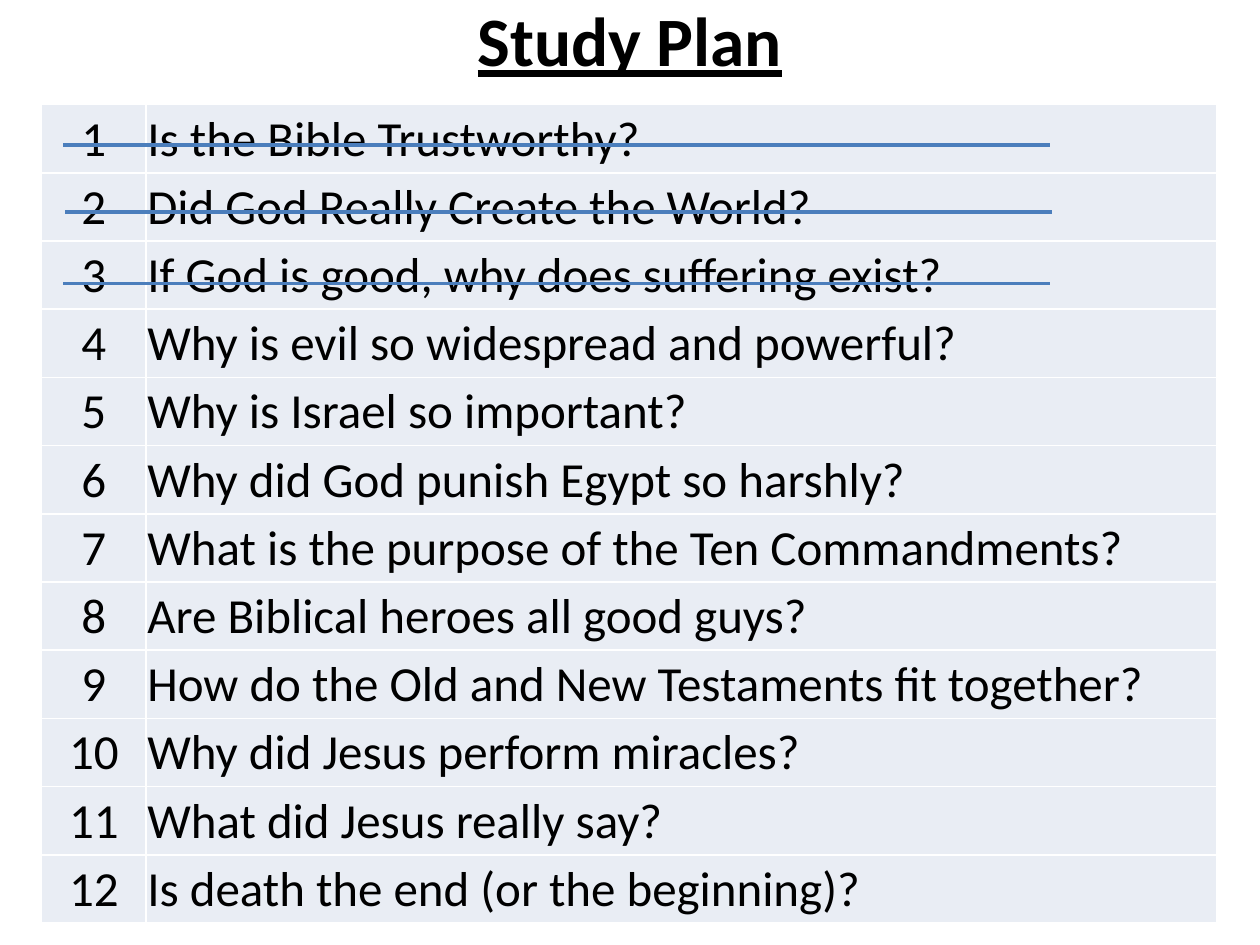
from dataclasses import dataclass

from lxml.etree import SubElement
from pptx import Presentation
from pptx.dml.color import RGBColor
from pptx.enum.shapes import MSO_CONNECTOR
from pptx.enum.text import MSO_ANCHOR, PP_ALIGN
from pptx.oxml.ns import qn
from pptx.util import Inches, Pt


@dataclass(frozen=True)
class Theme:
    font: str = "Calibri"
    text: RGBColor = RGBColor(0x00, 0x00, 0x00)
    cell: RGBColor = RGBColor(0xE9, 0xED, 0xF4)
    strike: RGBColor = RGBColor(0x4B, 0x7E, 0xBC)
    title_size: Pt = Pt(39.6)
    body_size: Pt = Pt(28)
    strike_width: Pt = Pt(2.25)


theme = Theme()

TOPICS = [
    "Is the Bible Trustworthy?",
    "Did God Really Create the World?",
    "If God is good, why does suffering exist?",
    "Why is evil so widespread and powerful?",
    "Why is Israel so important?",
    "Why did God punish Egypt so harshly?",
    "What is the purpose of the Ten Commandments?",
    "Are Biblical heroes all good guys?",
    "How do the Old and New Testaments fit together?",
    "Why did Jesus perform miracles?",
    "What did Jesus really say?",
    "Is death the end (or the beginning)?",
]
STRIKES = [(0.5, 1.15), (0.52, 1.68), (0.5, 2.25)]  # left, y
STRIKE_LENGTH = 7.83


def style_text(tf, size, align):
    tf.vertical_anchor = MSO_ANCHOR.MIDDLE
    p = tf.paragraphs[0]
    p.alignment = align
    font = p.runs[0].font
    font.name, font.size = theme.font, size
    font.color.rgb = theme.text
    return font


prs = Presentation()
prs.slide_width, prs.slide_height = Inches(10), Inches(7.5)
s = prs.slides.add_slide(prs.slide_layouts[5])

# Title
title = s.shapes.title
title.left, title.top = Inches(0.5), Inches(-0.08)
title.width, title.height = Inches(9), Inches(0.78)
title.text_frame.text = "Study Plan"
font = style_text(title.text_frame, theme.title_size, PP_ALIGN.CENTER)
font.bold = font.underline = True

# Numbered topics
table = s.shapes.add_table(len(TOPICS), 2, Inches(0.33), Inches(0.83),
                           Inches(9.33), Inches(6.5)).table
table.first_row = table.horz_banding = False
table.columns[0].width, table.columns[1].width = Inches(0.83), Inches(8.5)

for i, topic in enumerate(TOPICS):
    for j, (text, align) in enumerate([(str(i + 1), PP_ALIGN.CENTER),
                                       (topic, PP_ALIGN.LEFT)]):
        cell = table.cell(i, j)
        cell.fill.solid()
        cell.fill.fore_color.rgb = theme.cell
        cell.margin_left = cell.margin_right = cell.margin_top = Inches(0.01)
        cell.margin_bottom = 0
        cell.text_frame.text = text
        style_text(cell.text_frame, theme.body_size, align)
        cell.vertical_anchor = MSO_ANCHOR.MIDDLE

# Lines through the finished topics
for left, y in STRIKES:
    line = s.shapes.add_connector(MSO_CONNECTOR.STRAIGHT, Inches(left), Inches(y),
                                  Inches(left + STRIKE_LENGTH), Inches(y))
    line.line.color.rgb = theme.strike
    line.line.width = theme.strike_width
    SubElement(line._element.spPr, qn("a:effectLst"))

prs.save("out.pptx")
